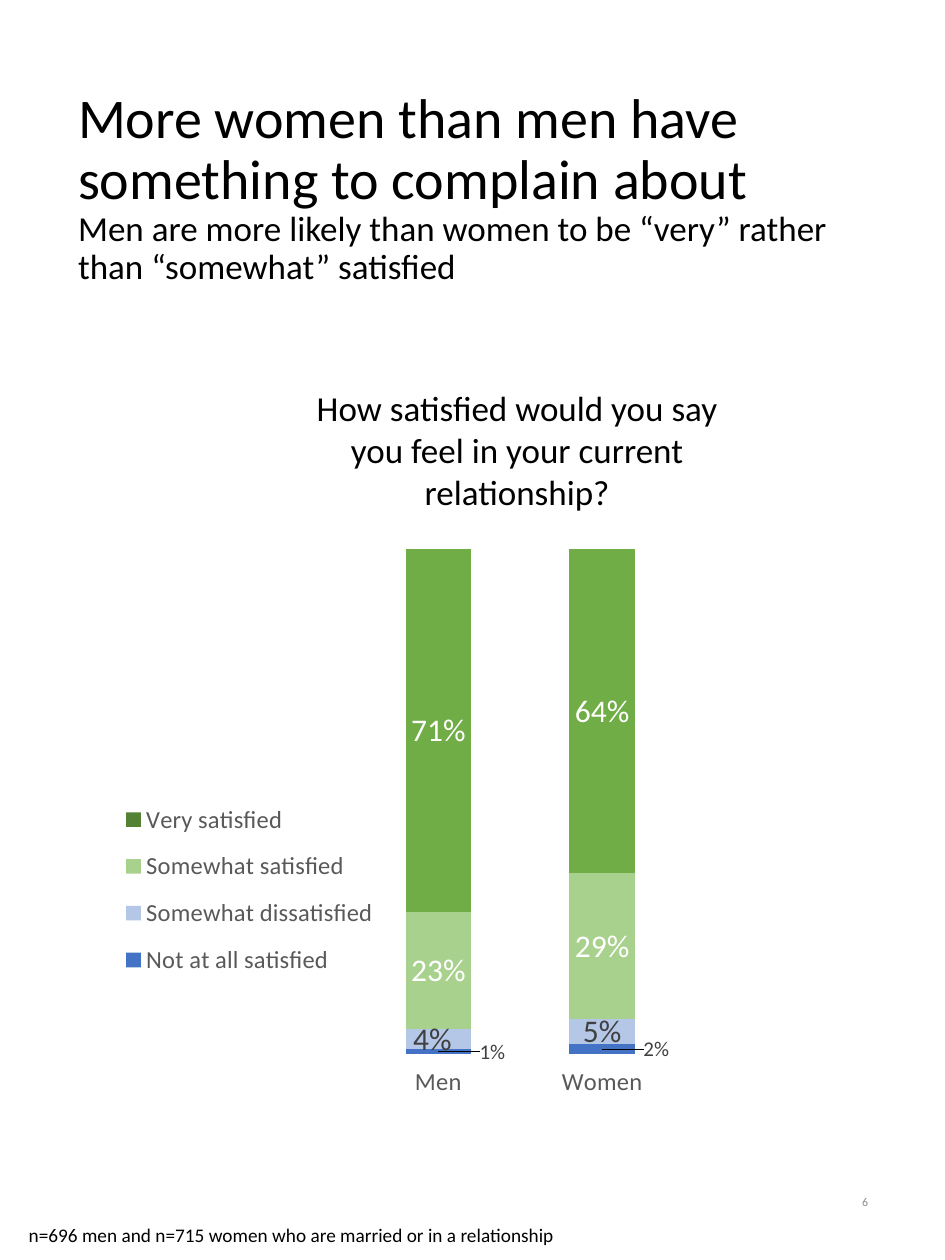
import pptx
import pptx.chart.data
import pptx.dml.color
import pptx.enum.chart
import pptx.enum.text
import pptx.oxml
import pptx.oxml.ns
import pptx.util
from pptx.util import Cm

ALIGN = pptx.enum.text.PP_ALIGN
ANCHOR = pptx.enum.text.MSO_ANCHOR
FONT_NAME = "Calibri"
BLACK, GREY = "000000", "595959"

# name, share of men and women, series colour, bar colour, label size, label colour
ANSWERS = [
    ("Not at all satisfied", (0.01, 0.02), "4472C4", "4472C4", 12, "404040"),
    ("Somewhat dissatisfied", (0.04, 0.05), "B4C7E7", "B4C7E7", 18, "404040"),
    ("Somewhat satisfied", (0.23, 0.29), "A9D18E", "A9D18E", 18, "FFFFFF"),
    ("Very satisfied", (0.71, 0.64), "548235", "70AD47", 18, "FFFFFF"),
]
# (answer, category): label offset as a fraction of the chart
LABEL_OFFSETS = {(0, 0): (0.09, 0), (0, 1): (0.09, 0), (1, 0): (-0.01, 0)}


def rgb(hex_string):
    return pptx.dml.color.RGBColor.from_string(hex_string)


def style_font(font, size, color):
    font.name = FONT_NAME
    font.size = pptx.util.Pt(size)
    font.color.rgb = rgb(color)


def fill_solid(part, color):
    part.format.fill.solid()
    part.format.fill.fore_color.rgb = rgb(color)


def manual_layout(**settings):
    """Return a c:layout element with the settings in schema order."""
    children = "".join(f'<c:{key} val="{value}"/>' for key, value in settings.items())
    return pptx.oxml.parse_xml(
        f'<c:layout {pptx.oxml.ns.nsdecls("c")}>'
        f"<c:manualLayout>{children}</c:manualLayout></c:layout>")


def place_after(anchor, layout):
    """Put the layout behind the anchor, in place of any layout already there."""
    following = anchor.getnext()
    if following is not None and following.tag == layout.tag:
        anchor.getparent().remove(following)
    anchor.addnext(layout)


def add_title(slide, headline, subhead):
    title = slide.shapes.title
    title.left, title.top, title.width, title.height = Cm(1.32), Cm(1.35), Cm(16.43), Cm(4.9)
    frame = title.text_frame
    frame.word_wrap = True
    frame.auto_size = pptx.enum.text.MSO_AUTO_SIZE.NONE
    frame.vertical_anchor = ANCHOR.MIDDLE
    paragraph = frame.paragraphs[0]
    paragraph.alignment = ALIGN.LEFT
    paragraph.line_spacing = 0.9
    style_font(paragraph.font, 32, BLACK)
    headline_run = paragraph.add_run()
    headline_run.text = headline
    headline_run.font.size = pptx.util.Pt(32)
    paragraph.add_line_break()
    subhead_run = paragraph.add_run()
    subhead_run.text = subhead
    subhead_run.font.size = pptx.util.Pt(20)


def add_text(slide, text, box, size, color=BLACK, align=ALIGN.LEFT, anchor=ANCHOR.TOP):
    frame = slide.shapes.add_textbox(*map(Cm, box)).text_frame
    frame.word_wrap = True
    frame.vertical_anchor = anchor
    paragraph = frame.paragraphs[0]
    paragraph.text = text
    paragraph.alignment = align
    style_font(paragraph.font, size, color)


def style_answer(series, index):
    _, shares, series_color, bar_color, size, label_color = ANSWERS[index]
    fill_solid(series, series_color)
    if bar_color != series_color:
        for category in range(len(shares)):
            fill_solid(series.points[category], bar_color)
    labels = series.data_labels
    labels.show_value = True
    labels.number_format = "0%"
    labels.number_format_is_linked = False
    style_font(labels.font, size, label_color)
    for category in range(len(shares)):
        if (index, category) in LABEL_OFFSETS:
            x, y = LABEL_OFFSETS[index, category]
            style_font(series.points[category].data_label.font, size, label_color)
            idx = labels._element.xpath(f"c:dLbl/c:idx[@val={category}]")[0]
            place_after(idx, manual_layout(x=x, y=y))


def add_satisfaction_chart(slide):
    data = pptx.chart.data.CategoryChartData(number_format="0%")
    data.categories = ["Men", "Women"]
    for name, shares, *_ in ANSWERS:
        data.add_series(name, shares)
    chart = slide.shapes.add_chart(
        pptx.enum.chart.XL_CHART_TYPE.COLUMN_STACKED_100,
        Cm(2.06), Cm(10.49), Cm(12.12), Cm(11.73), data).chart
    chart.has_title = False
    style_font(chart.font, 10, BLACK)

    plot = chart.plots[0]
    plot.gap_width, plot.overlap = 150, 100
    plot.vary_by_categories = False
    for index, series in enumerate(plot.series):
        style_answer(series, index)

    chart.value_axis.has_major_gridlines = False
    chart.value_axis.visible = False
    chart.category_axis.format.line.fill.background()
    style_font(chart.category_axis.tick_labels.font, 14, GREY)

    chart.has_legend = True
    legend = chart.legend
    legend.position = pptx.enum.chart.XL_LEGEND_POSITION.LEFT
    legend.include_in_layout = False
    style_font(legend.font, 14, GREY)
    place_after(legend._element.xpath("c:legendPos")[0], manual_layout(
        xMode="edge", yMode="edge", x=0.02, y=0.46, w=0.45, h=0.35))

    plot_area = chart._chartSpace.xpath("c:chart/c:plotArea")[0]
    for old_layout in plot_area.xpath("c:layout"):
        plot_area.remove(old_layout)
    plot_area.insert(0, manual_layout(
        layoutTarget="inner", xMode="edge", yMode="edge",
        x=0.423, y=0.05, w=0.545, h=0.868))


def main():
    presentation = pptx.Presentation()
    presentation.slide_width, presentation.slide_height = Cm(19.05), Cm(25.4)
    slide = presentation.slides.add_slide(presentation.slide_layouts[5])
    add_title(slide, "More women than men have something to complain about",
              "Men are more likely than women to be “very” rather than “somewhat” satisfied")
    add_text(slide, "6", (13.46, 23.55, 4.29, 1.35), 6.8, "8C8C8C", ALIGN.RIGHT, ANCHOR.MIDDLE)
    add_satisfaction_chart(slide)
    add_text(slide, "n=696 men and n=715 women who are married or in a relationship",
             (0.33, 24.54, 18.11, 0.74), 11)
    add_text(slide, "How satisfied would you say you feel in your current relationship?",
             (5.66, 7.67, 9.53, 2.82), 20, align=ALIGN.CENTER)
    presentation.save("out.pptx")


if __name__ == "__main__":
    main()
